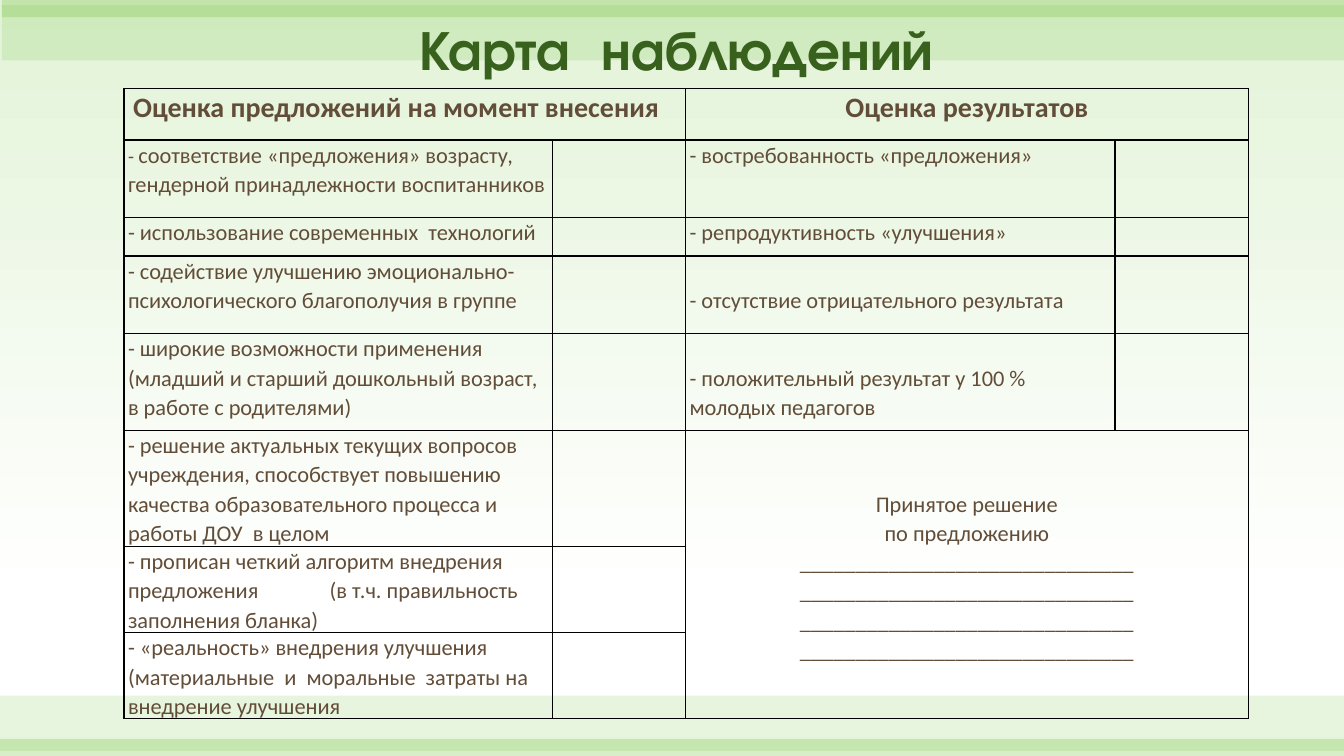
from lxml import etree
from pptx import Presentation
from pptx.dml.color import RGBColor
from pptx.enum.shapes import MSO_SHAPE
from pptx.enum.text import MSO_ANCHOR, PP_ALIGN
from pptx.oxml import parse_xml
from pptx.oxml.ns import nsdecls, qn
from pptx.util import Inches, Pt

RECTANGLE = MSO_SHAPE.RECTANGLE
BOTTOM = MSO_ANCHOR.BOTTOM
LEFT, CENTER = PP_ALIGN.LEFT, PP_ALIGN.CENTER

COLORS = {
    "sky": "E3F3D8",
    "white": "FFFFFF",
    "band": "72C23C",
    "title": "39611E",
    "text": "624D38",
    "border": "000000",
}
BODY_FONT, TITLE_FONT = "Calibri", "TeX Gyre Adventor"
LINE_HEIGHT = 0.29

BANDS = [
    (0, 6.9, 0.55, 17),
    (0, 7.33, 0.17, 28),
    (0.02, 0.05, 0.55, 17),
    (0.02, 0, 0.17, 28),
]
COLUMNS = [4.25, 1.32, 4.26, 1.32]
ROWS = [0.51, 0.77, 0.38, 0.77, 0.96, 1.15, 0.77, 0.77]
PROPOSAL_CRITERIA = [
    "соответствие «предложения» возрасту, гендерной принадлежности воспитанников",
    "- использование современных  технологий",
    "- содействие улучшению эмоционально-психологического благополучия в группе",
    "- широкие возможности применения (младший и старший дошкольный возраст, "
    "в работе с родителями)",
    "- решение актуальных текущих вопросов учреждения, способствует повышению "
    "качества образовательного процесса и работы ДОУ  в целом",
    "- прописан четкий алгоритм внедрения предложения\t(в т.ч. правильность "
    "заполнения бланка)",
    "- «реальность» внедрения улучшения (материальные  и  моральные  затраты на "
    "внедрение улучшения",
]
RESULT_CRITERIA = [
    ("- востребованность «предложения»", 0),
    ("- репродуктивность «улучшения»", 0),
    ("- отсутствие отрицательного результата", 1),
    ("- положительный результат у 100 % молодых педагогов", 1),
]
DECISION = ["Принятое решение", "по предложению"] + ["_" * 30] * 4


def rgb(name):
    """Return the named colour."""
    return RGBColor.from_string(COLORS[name])


def paint_background(page):
    """Fill the page with a gradient running down to white."""
    fill = page.background.fill
    fill.gradient()
    fill.gradient_angle = 270
    for stop, name, position in zip(fill.gradient_stops, ("sky", "white"), (0, 0.79)):
        stop.color.rgb = rgb(name)
        stop.position = position


def add_band(page, left, top, height, opacity):
    """Draw a translucent band across the page."""
    band = page.shapes.add_shape(
        RECTANGLE, Inches(left), Inches(top), Inches(13.33), Inches(height))
    band.shadow.inherit = False
    band.line.fill.background()
    band.fill.solid()
    band.fill.fore_color.rgb = rgb("band")
    color = band.fill._xPr.find(f".//{qn('a:srgbClr')}")
    etree.SubElement(color, qn("a:alpha")).set("val", str(opacity * 1000))


def style_paragraph(para, size, color="text", font=BODY_FONT, bold=False,
                    align=LEFT, spacing=1.07):
    """Set the font and layout of a paragraph."""
    para.alignment = align
    para.line_spacing = spacing
    para.font.size = Pt(size)
    para.font.name = font
    para.font.bold = bold
    para.font.color.rgb = rgb(color)


def add_title(page, text):
    """Write the heading above the table."""
    box = page.shapes.add_textbox(Inches(1.46), Inches(0.23), Inches(10.5), Inches(0.64))
    frame = box.text_frame
    frame.word_wrap = True
    frame.vertical_anchor = BOTTOM
    frame.text = text
    style_paragraph(frame.paragraphs[0], 40, "title", TITLE_FONT, True, CENTER, 0.9)


def prepare_cell(cell):
    """Make a cell clear with narrow margins and thin borders."""
    cell.margin_left = cell.margin_right = Inches(0.04)
    cell.margin_top = cell.margin_bottom = 0
    cell.fill.background()
    style_paragraph(cell.text_frame.paragraphs[0], 16)
    properties = cell._tc.get_or_add_tcPr()
    for index, side in enumerate("LRTB"):
        properties.insert(index, parse_xml(
            f'<a:ln{side} {nsdecls("a")} w="12700"><a:solidFill>'
            f'<a:srgbClr val="{COLORS["border"]}"/></a:solidFill></a:ln{side}>'))


def write_cell(cell, lines, size=16, bold=False, align=LEFT, skipped=0):
    """Write lines into a cell below a number of skipped line heights."""
    cell.margin_top = Inches(skipped * LINE_HEIGHT)
    cell.text_frame.text = "\n".join(lines)
    for para in cell.text_frame.paragraphs:
        style_paragraph(para, size, bold=bold, align=align)


def add_tab_stop(para, position):
    """Give a paragraph a left tab stop."""
    properties = para._p.get_or_add_pPr()
    stops = parse_xml(f'<a:tabLst {nsdecls("a")}>'
                      f'<a:tab pos="{Inches(position)}" algn="l"/></a:tabLst>')
    properties.find(qn("a:defRPr")).addprevious(stops)


def add_observation_table(page):
    """Build the table of criteria."""
    table = page.shapes.add_table(
        len(ROWS), len(COLUMNS), Inches(1.23), Inches(0.88),
        Inches(sum(COLUMNS)), Inches(sum(ROWS))).table
    table.first_row = table.horz_banding = False
    for column, width in zip(table.columns, COLUMNS):
        column.width = Inches(width)
    for row, height in zip(table.rows, ROWS):
        row.height = Inches(height)
    for cell in table.iter_cells():
        prepare_cell(cell)

    for column in (0, 2):
        table.cell(0, column).merge(table.cell(0, column + 1))
    table.cell(5, 2).merge(table.cell(7, 3))

    write_cell(table.cell(0, 0), ["Оценка предложений на момент внесения"], 20, True)
    table.cell(0, 0).margin_left = Inches(0.09)
    write_cell(table.cell(0, 2), ["Оценка результатов"], 20, True, CENTER)
    for row, text in enumerate(PROPOSAL_CRITERIA, 1):
        write_cell(table.cell(row, 0), [text])
    for row, (text, skipped) in enumerate(RESULT_CRITERIA, 1):
        write_cell(table.cell(row, 2), [text], skipped=skipped)
    write_cell(table.cell(5, 2), DECISION, align=CENTER, skipped=2)

    first = table.cell(1, 0).text_frame.paragraphs[0]
    criterion = first.runs[0]
    tail = first.add_run()
    tail.text, criterion.text = criterion.text, "- "
    criterion.font.size = Pt(14)
    add_tab_stop(table.cell(6, 0).text_frame.paragraphs[0], 2)


def main():
    """Build and save the deck."""
    deck = Presentation()
    deck.slide_width, deck.slide_height = Inches(13.33), Inches(7.5)
    page = deck.slides.add_slide(deck.slide_layouts[6])
    paint_background(page)
    for band in BANDS:
        add_band(page, *band)
    add_title(page, "Карта  наблюдений")
    add_observation_table(page)
    deck.save("out.pptx")


if __name__ == "__main__":
    main()
